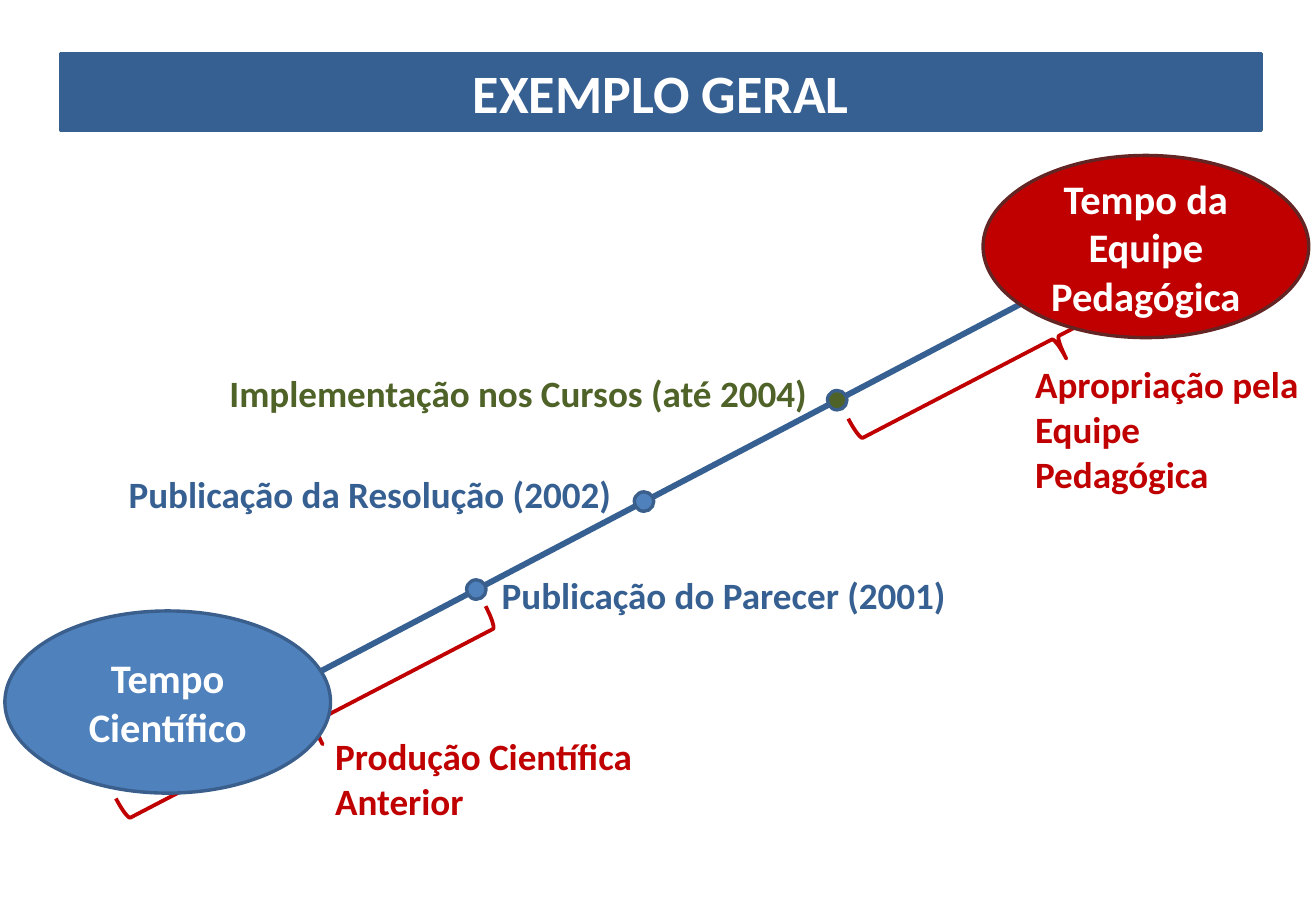
from lxml import etree
from pptx import Presentation
from pptx import util as u
from pptx.dml.color import RGBColor
from pptx.enum import shapes, text
from pptx.oxml.ns import qn

PX = u.Inches(1) // 100  # 100 px to the inch

WHITE = RGBColor(0xFF, 0xFF, 0xFF)
NAVY = RGBColor(0x37, 0x60, 0x92)
BLUE = RGBColor(0x4F, 0x81, 0xBD)
EDGE = RGBColor(0x3A, 0x5F, 0x8C)
GREEN = RGBColor(0x4F, 0x62, 0x28)
RED = RGBColor(0xC0, 0x00, 0x00)
MAROON = RGBColor(0x63, 0x25, 0x23)

# Content: boxes are (left, top, width, height) in px
TITLE = ("EXEMPLO GERAL", (50, 44, 988, 63))
AXIS = ((86, 646), (1031, 150))
DOT = 16
# dot centre x, dot fill, label, label colour, label box
MILESTONES = [
    (392, BLUE, "Publicação do Parecer (2001)", NAVY, (403, 466, 422, 47)),
    (530, BLUE, "Publicação da Resolução (2002)", NAVY, (96, 383, 429, 47)),
    (689, GREEN, "Implementação nos Cursos (até 2004)", GREEN, (179, 300, 514, 47)),
]
BRACE_ANGLE = 62.5
# brace box, label, label box
PERIODS = [
    ((237, 424, 39, 343), "Produção Científica Anterior", (266, 599, 278, 84)),
    ((849, 96, 39, 364), "Apropriação pela Equipe Pedagógica", (842, 293, 251, 121)),
]
# label, box, fill, outline
ENDS = [
    ("Tempo Científico", (4, 503, 268, 150), BLUE, EDGE),
    ("Tempo da Equipe Pedagógica", (809, 128, 268, 150), RED, MAROON),
]

prs = Presentation()
prs.slide_width, prs.slide_height = 1083 * PX, 750 * PX
s = prs.slides.add_slide(prs.slide_layouts[6])


def emu(box):
    return [round(v * PX) for v in box]


def write(sp, words, size, color, align, anchor):
    tf = sp.text_frame
    for name, value in {"word_wrap": True, "vertical_anchor": anchor}.items():
        setattr(tf, name, value)
    p = tf.paragraphs[0]
    p.alignment = align
    r = p.add_run()
    r.text = words
    for name, value in {"name": "Calibri", "size": u.Pt(size), "bold": True}.items():
        setattr(r.font, name, value)
    r.font.color.rgb = color


def add_label(words, box, color):
    sp = s.shapes.add_textbox(*emu(box))
    write(sp, words, 22, color, text.PP_ALIGN.LEFT, text.MSO_ANCHOR.TOP)
    sp.text_frame.auto_size = text.MSO_AUTO_SIZE.SHAPE_TO_FIT_TEXT


def add_form(kind, box, fill, line, width=2):
    sp = s.shapes.add_shape(kind, *emu(box))
    sp.shadow.inherit = False
    if fill is None:
        sp.fill.background()
    else:
        sp.fill.solid()
        sp.fill.fore_color.rgb = fill
    sp.line.color.rgb = line
    sp.line.width = u.Pt(width)
    return sp


def add_centred(kind, words, box, fill, line, size):
    sp = add_form(kind, box, fill, line)
    write(sp, words, size, WHITE, text.PP_ALIGN.CENTER, text.MSO_ANCHOR.MIDDLE)


# Title bar
words, box = TITLE
add_centred(shapes.MSO_SHAPE.RECTANGLE, words, box, NAVY, NAVY, 32)

# Time axis
(x0, y0), (x1, y1) = AXIS
axis = s.shapes.add_connector(shapes.MSO_CONNECTOR.STRAIGHT, *emu((x0, y0, x1, y1)))
axis.line.color.rgb = NAVY
axis.line.width = u.Pt(3.5)
sp_pr = axis.line._get_or_add_ln().getparent()
etree.SubElement(axis.line._get_or_add_ln(), qn("a:tailEnd"), type="arrow")
etree.SubElement(sp_pr, qn("a:effectLst"))

# Milestones, each dot centred on the axis
for x, fill, words, color, box in MILESTONES:
    y = y0 + (x - x0) * (y1 - y0) / (x1 - x0)
    add_form(shapes.MSO_SHAPE.FLOWCHART_CONNECTOR,
             (x - DOT / 2, y - DOT / 2, DOT, DOT), fill, EDGE)
    add_label(words, box, color)

# Periods under braces
for brace, words, box in PERIODS:
    sp = add_form(shapes.MSO_SHAPE.RIGHT_BRACE, brace, None, RED, 2.25)
    sp.rotation = BRACE_ANGLE
    add_label(words, box, RED)

# Ends of the axis
for words, box, fill, line in ENDS:
    add_centred(shapes.MSO_SHAPE.OVAL, words, box, fill, line, 24)

prs.save("out.pptx")
